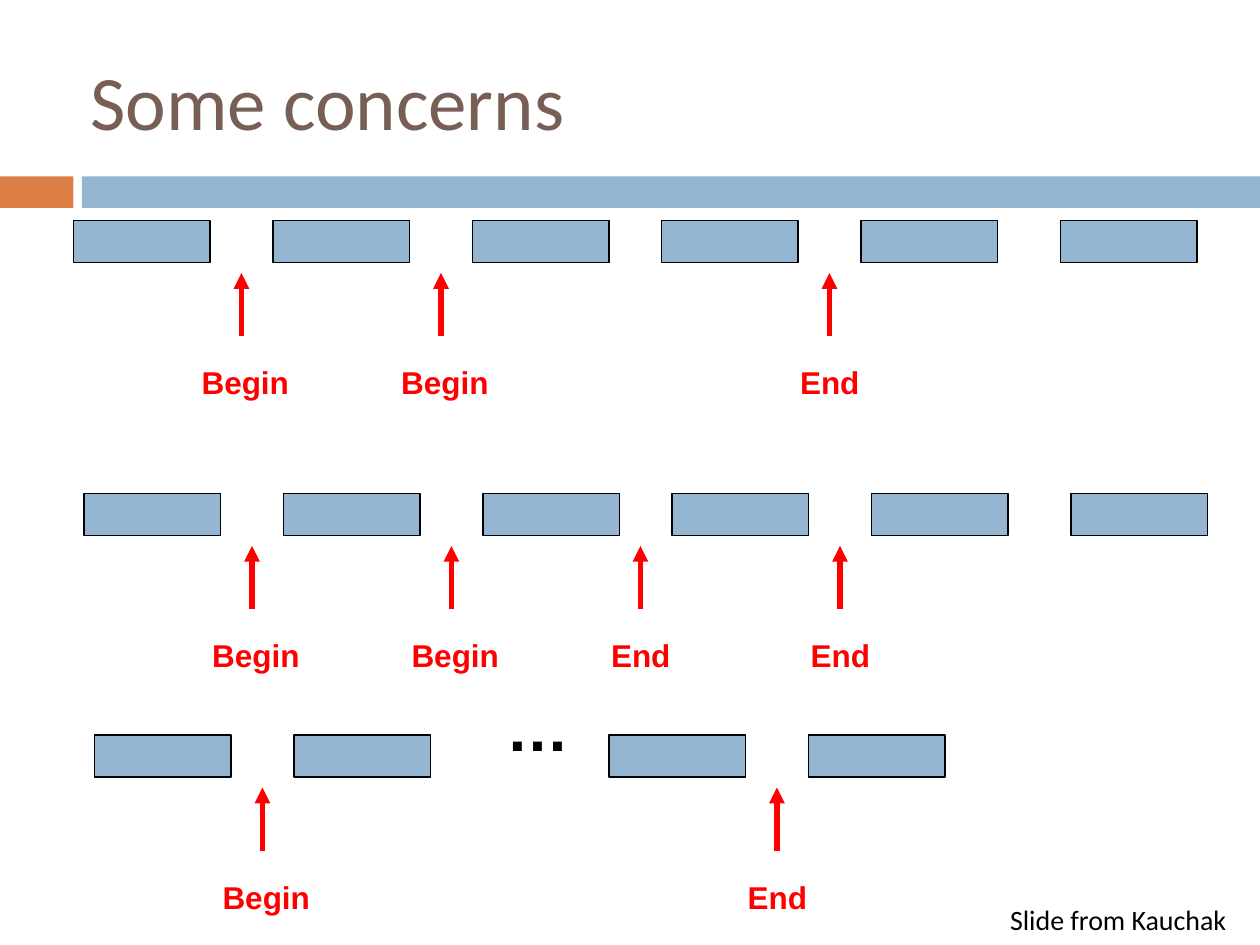
from dataclasses import dataclass

from lxml import etree
from pptx import Presentation
from pptx import util as u
from pptx.dml.color import RGBColor
from pptx.enum import shapes, text
from pptx.oxml.ns import qn
from pptx.slide import Slide

EMU_PER_PX = 7620  # 120 px to the inch


@dataclass(frozen=True)
class Theme:
    orange: str = "DD8047"
    blue: str = "94B6D2"
    brown: str = "775F55"
    red: str = "FF0000"
    black: str = "000000"
    heading_font: str = "Calibri"
    label_font: str = "Arial"
    title_size: int = 44
    dots_size: int = 36
    label_size: int = 18
    credit_size: int = 16


@dataclass(frozen=True)
class Area:
    left: int
    top: int
    width: int
    height: int

    def emu(self) -> list[int]:
        return [px(v) for v in (self.left, self.top, self.width, self.height)]


@dataclass(frozen=True)
class Style:
    font: str
    size: int
    color: str
    bold: bool = False


@dataclass(frozen=True)
class Marker:
    """A labelled arrow in the gap before the box with this index."""
    label: str
    before: int


@dataclass(frozen=True)
class Row:
    left: int
    top: int
    offsets: tuple[int, ...]
    markers: tuple[Marker, ...]


THEME = Theme()
LABEL = Style(THEME.label_font, THEME.label_size, THEME.red, True)
LABEL_SHIFT = {"Begin": 44, "End": 34}
SIX_BOXES = (0, 190, 380, 560, 750, 940)
FOUR_BOXES = (0, 190, 490, 680)
ROWS = (
    Row(70, 210, SIX_BOXES, (Marker("Begin", 1), Marker("Begin", 2), Marker("End", 4))),
    Row(80, 470, SIX_BOXES, (Marker("Begin", 1), Marker("Begin", 2),
                             Marker("End", 3), Marker("End", 4))),
    Row(90, 700, FOUR_BOXES, (Marker("Begin", 1), Marker("End", 3))),
)


def px(value: int) -> u.Emu:
    return u.Emu(value * EMU_PER_PX)


def add_box(page: Slide, area: Area, fill: str, outlined: bool = True) -> None:
    box = page.shapes.add_shape(shapes.MSO_SHAPE.RECTANGLE, *area.emu())
    box.shadow.inherit = False
    box.fill.solid()
    box.fill.fore_color.rgb = RGBColor.from_string(fill)
    if outlined:
        box.line.color.rgb = RGBColor.from_string(THEME.black)
        box.line.width = u.Pt(0.75)
    else:
        box.line.fill.background()


def add_text(page: Slide, area: Area, words: str, style: Style, middle: bool = False) -> None:
    box = page.shapes.add_textbox(*area.emu())
    frame = box.text_frame
    frame.word_wrap = True
    frame.margin_left = frame.margin_right = px(6)
    frame.margin_top = frame.margin_bottom = px(6)
    if middle:
        frame.vertical_anchor = text.MSO_ANCHOR.MIDDLE
    else:
        frame.auto_size = text.MSO_AUTO_SIZE.SHAPE_TO_FIT_TEXT
    span = frame.paragraphs[0].add_run()
    span.text = words
    span.font.name = style.font
    span.font.size = u.Pt(style.size)
    span.font.bold = style.bold
    span.font.color.rgb = RGBColor.from_string(style.color)


def add_up_arrow(page: Slide, x: int, bottom: int, top: int) -> None:
    arrow = page.shapes.add_connector(
        shapes.MSO_CONNECTOR.STRAIGHT, px(x), px(bottom), px(x), px(top))
    arrow.line.color.rgb = RGBColor.from_string(THEME.red)
    arrow.line.width = u.Pt(3)
    etree.SubElement(arrow.line._get_or_add_ln(), qn("a:tailEnd"), type="triangle")
    etree.SubElement(arrow._element.spPr, qn("a:effectLst"))


def add_row(page: Slide, row: Row) -> None:
    for offset in row.offsets:
        add_box(page, Area(row.left + offset, row.top, 130, 40), THEME.blue)
    for marker in row.markers:
        x = row.left + row.offsets[marker.before] - 30
        add_up_arrow(page, x, row.top + 110, row.top + 50)
        label_left = x - LABEL_SHIFT[marker.label]
        add_text(page, Area(label_left, row.top + 130, 98, 46), marker.label, LABEL)


def main() -> None:
    deck = Presentation()
    deck.slide_width, deck.slide_height = px(1200), px(900)
    page = deck.slides.add_slide(deck.slide_layouts[6])
    add_box(page, Area(0, 168, 70, 30), THEME.orange, outlined=False)
    add_box(page, Area(78, 168, 1122, 30), THEME.blue, outlined=False)
    add_text(page, Area(80, 30, 1070, 130), "Some concerns",
             Style(THEME.heading_font, THEME.title_size, THEME.brown), middle=True)
    for row in ROWS:
        add_row(page, row)
    add_text(page, Area(476, 650, 248, 80), "…",
             Style(THEME.label_font, THEME.dots_size, THEME.black, True))
    add_text(page, Area(956, 854, 238, 42), "Slide from Kauchak",
             Style(THEME.heading_font, THEME.credit_size, THEME.black))
    deck.save("out.pptx")


if __name__ == "__main__":
    main()
